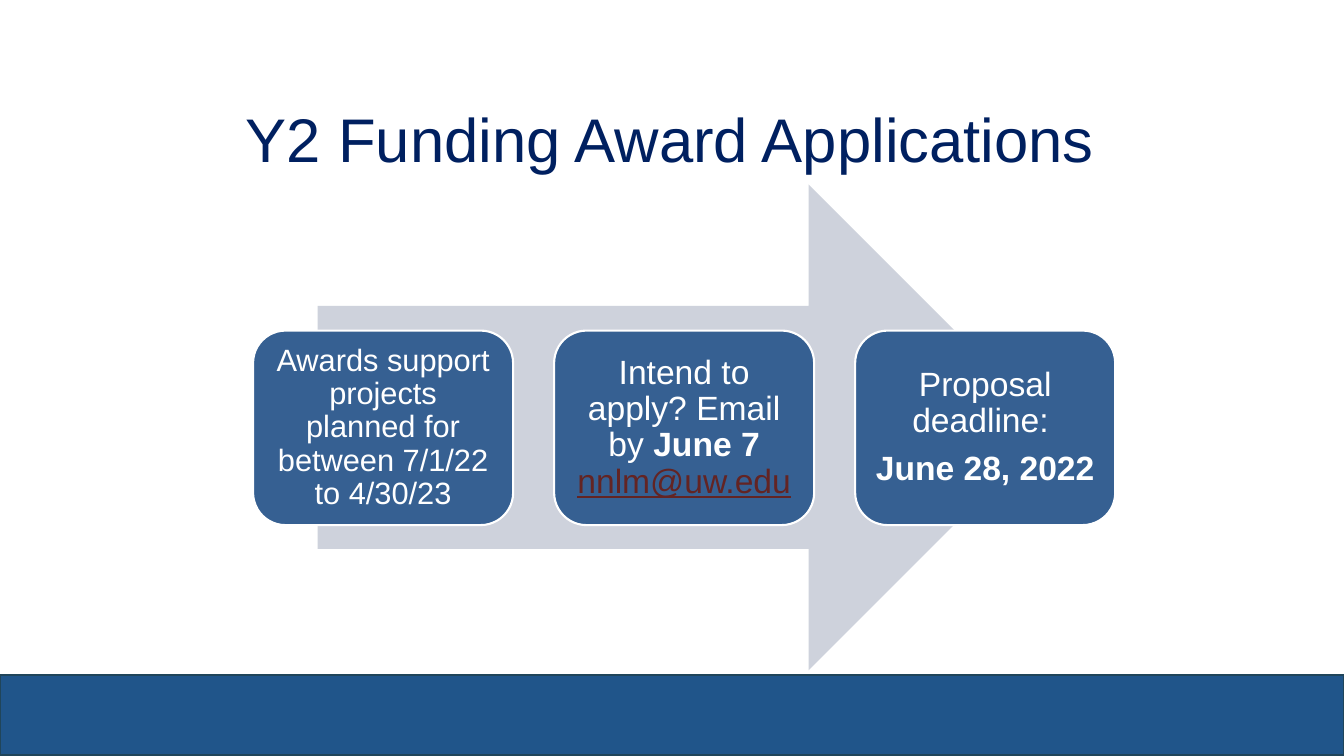
"""Build the Y2 funding award applications slide."""
from dataclasses import dataclass
from typing import NamedTuple, Optional

from pptx import Presentation
from pptx.dml.color import RGBColor
from pptx.enum.shapes import MSO_SHAPE
from pptx.enum.text import MSO_ANCHOR, PP_ALIGN
from pptx.shapes.autoshape import Shape
from pptx.slide import Slide
from pptx.text.text import TextFrame
from pptx.util import Emu, Inches, Pt

SLIDE_W, SLIDE_H = Inches(13.33), Inches(7.5)


@dataclass(frozen=True)
class Theme:
    font: str = "Arial"
    title: str = "002060"
    band: str = "20558A"
    band_line: str = "20455A"
    arrow: str = "CED2DC"
    card: str = "366092"
    white: str = "FFFFFF"
    email: str = "632423"
    title_size: float = 44
    card_size: float = 24
    long_card_size: float = 22
    line_width: float = 1.5
    line_spacing: float = 0.9
    paragraph_gap: float = 0.35


THEME = Theme()


class Area(NamedTuple):
    """Left, top, width and height as percentages of the slide."""
    x: float
    y: float
    w: float
    h: float

    def emu(self) -> list[Emu]:
        sides = (SLIDE_W, SLIDE_H, SLIDE_W, SLIDE_H)
        return [Emu(round(side * share / 100)) for side, share in zip(sides, self)]


class Span(NamedTuple):
    text: str
    color: str = THEME.white
    bold: bool = False
    underline: bool = False


@dataclass(frozen=True)
class Card:
    paragraphs: list[list[Span]]
    size: float = THEME.card_size


BAND = Area(0, 89.33, 100, 10.53)
TITLE = Area(9.38, 8.93, 81.02, 19.73)
ARROW = Area(23.63, 24.4, 54.61, 64.27)
FIRST_CARD = Area(18.83, 43.73, 19.35, 25.73)
CARD_PITCH = 22.4

CARDS = [
    Card([[Span("Awards support projects planned for between 7/1/22 to 4/30/23")]],
         THEME.long_card_size),
    Card([[Span("Intend to apply? Email by "), Span("June 7 ", bold=True),
           Span("nnlm@uw.edu", THEME.email, underline=True)]]),
    Card([[Span("Proposal deadline: ")], [Span("June 28, 2022", bold=True)]]),
]


def add_block(s: Slide, kind: MSO_SHAPE, area: Area, fill: str,
              line: Optional[str] = None) -> Shape:
    """Add a filled preset shape with an optional outline."""
    sp = s.shapes.add_shape(kind, *area.emu())
    sp.shadow.inherit = False
    sp.fill.solid()
    sp.fill.fore_color.rgb = RGBColor.from_string(fill)
    if line:
        sp.line.color.rgb = RGBColor.from_string(line)
        sp.line.width = Pt(THEME.line_width)
    else:
        sp.line.fill.background()
    return sp


def write(tf: TextFrame, paragraphs: list[list[Span]], size: float) -> None:
    """Fill a text frame with centred paragraphs of styled spans."""
    tf.word_wrap = True
    tf.vertical_anchor = MSO_ANCHOR.MIDDLE
    for i, spans in enumerate(paragraphs):
        p = tf.add_paragraph() if i else tf.paragraphs[0]
        p.alignment = PP_ALIGN.CENTER
        p.line_spacing = THEME.line_spacing
        p.space_after = Pt(size * THEME.paragraph_gap)
        for span in spans:
            r = p.add_run()
            r.text = span.text
            r.font.name = THEME.font
            r.font.size = Pt(size)
            r.font.bold = span.bold
            r.font.underline = span.underline
            r.font.color.rgb = RGBColor.from_string(span.color)


def add_card(s: Slide, card: Card, column: int) -> None:
    """Add one rounded card in its column."""
    area = FIRST_CARD._replace(x=FIRST_CARD.x + column * CARD_PITCH)
    sp = add_block(s, MSO_SHAPE.ROUNDED_RECTANGLE, area, THEME.card, THEME.white)
    tf = sp.text_frame
    inset = round(SLIDE_W * 0.7 / 100)
    tf.margin_left = tf.margin_right = tf.margin_top = tf.margin_bottom = inset
    write(tf, card.paragraphs, card.size)


def main() -> None:
    """Draw the slide and save it."""
    prs = Presentation()
    prs.slide_width, prs.slide_height = SLIDE_W, SLIDE_H
    s = prs.slides.add_slide(prs.slide_layouts[6])
    add_block(s, MSO_SHAPE.RECTANGLE, BAND, THEME.band, THEME.band_line)
    title = s.shapes.add_textbox(*TITLE.emu())
    write(title.text_frame, [[Span("Y2 Funding Award Applications", THEME.title)]],
          THEME.title_size)
    add_block(s, MSO_SHAPE.RIGHT_ARROW, ARROW, THEME.arrow)
    for column, card in enumerate(CARDS):
        add_card(s, card, column)
    prs.save("out.pptx")


if __name__ == "__main__":
    main()
